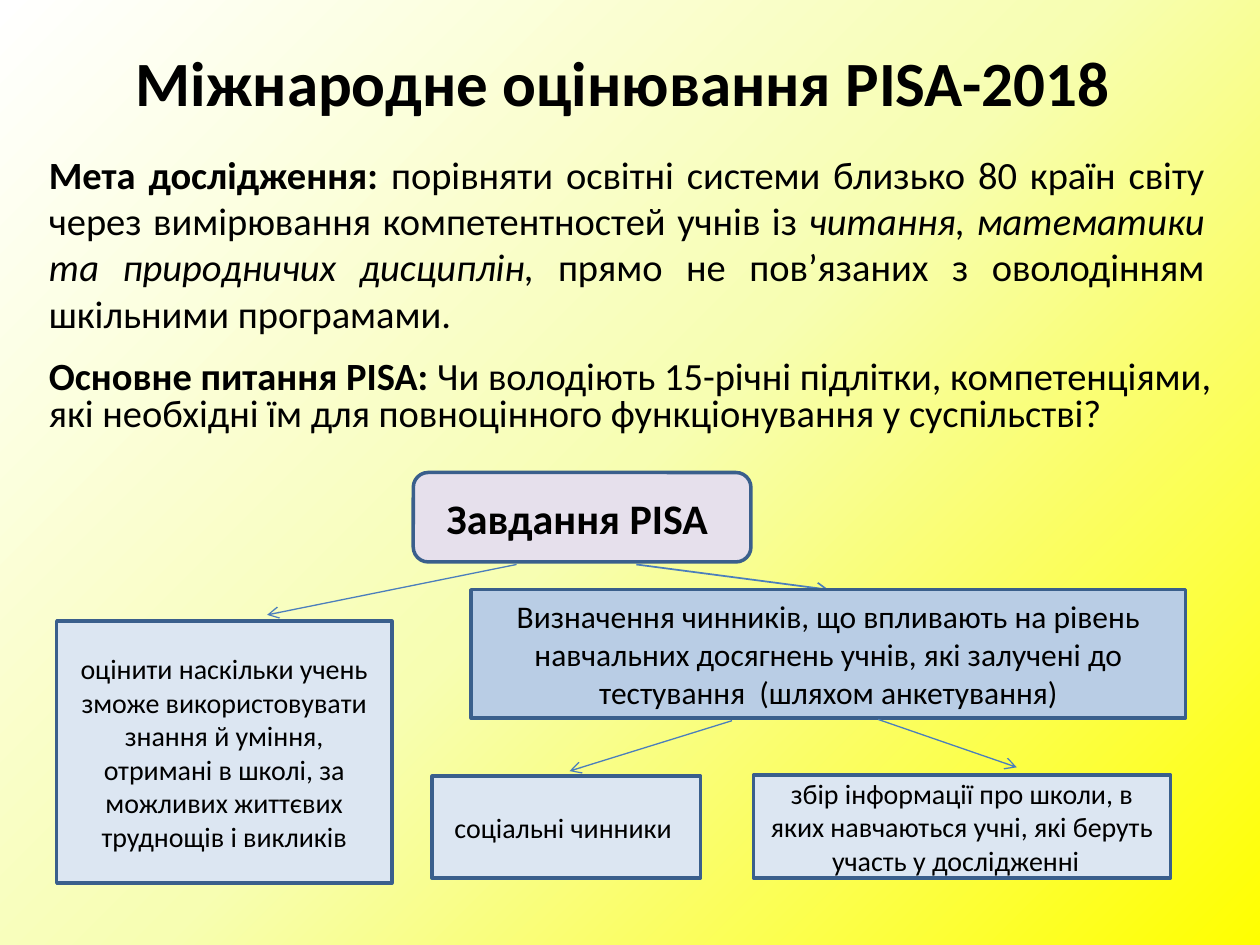
from dataclasses import dataclass
from pptx import Presentation
from pptx.dml.color import RGBColor
from pptx.enum.shapes import MSO_CONNECTOR as Conn, MSO_SHAPE as Shape
from pptx.enum.text import MSO_ANCHOR as Anchor, MSO_AUTO_SIZE as Auto, PP_ALIGN as Align
from pptx.oxml import parse_xml
from pptx.oxml.ns import nsdecls, qn
from pptx.util import Inches, Pt
from lxml.etree import SubElement


@dataclass(frozen=True)
class Theme:
    font: str = "Calibri"
    text: str = "000000"
    outline: str = "3A5F8C"
    arrow: str = "4B7EBC"
    root: str = "E6E0EC"
    branch: str = "B9CDE5"
    leaf: str = "DCE6F2"
    background: tuple = ((0, "FFFF00"), (50, "F7FEB2"), (100, "FFFFFF"))
    title: int = 36
    head: int = 24
    body: int = 22
    sub: int = 18
    small: int = 16


T = Theme()
WIDTH, HEIGHT = Inches(10), Inches(7.5)
COLUMNS = 100
UNIT = WIDTH / COLUMNS

TITLE = "Міжнародне оцінювання PISA-2018 "
TITLE_AT = (5, 3, 90, 6.9)

PASSAGES = [
    dict(at=(2.9, 11.5, 93.7, 60.6), anchor=Anchor.TOP, align=Align.JUSTIFY,
         before=0.2 * T.body, spacing=1.0,
         runs=[("Мета дослідження: ", "b"),
               ("порівняти освітні системи близько 80 країн світу через вимірювання "
                "компетентностей учнів із", ""),
               (" читання, математики та природничих дисциплін,", "i"),
               (" прямо не пов’язаних з оволодінням шкільними програмами.", "")]),
    dict(at=(2.9, 27.2, 95.1, 8.7), anchor=Anchor.MIDDLE, align=Align.LEFT,
         before=0, spacing=0.8,
         runs=[("Основне питання PISA: ", "b"),
               ("Чи володіють 15-річні підлітки, компетенціями, які необхідні їм для "
                "повноцінного функціонування у суспільстві?", "")]),
]

BOXES = {
    "tasks": (Shape.ROUNDED_RECTANGLE, (32.8, 37.5, 26.8, 7.1), T.root, T.head, True,
              "Завдання PISA "),
    "skills": (Shape.RECTANGLE, (4.5, 49.3, 26.6, 20.8), T.leaf, T.small, False,
               "оцінити наскільки учень зможе використовувати знання й уміння, "
               "отримані в школі, за можливих життєвих труднощів і викликів"),
    "factors": (Shape.RECTANGLE, (37.4, 46.8, 56.7, 10.2), T.branch, T.sub, False,
                "Визначення чинників, що впливають на рівень навчальних досягнень "
                "учнів, які залучені до тестування  (шляхом анкетування)"),
    "social": (Shape.RECTANGLE, (34.3, 61.6, 21.3, 8.1), T.leaf, T.small, False,
               "соціальні чинники "),
    "schools": (Shape.RECTANGLE, (59.8, 61.5, 33.1, 8.2), T.leaf, T.small, False,
                "збір інформації про школи, в яких навчаються учні, які беруть "
                "участь у дослідженні  "),
}

ARROWS = [
    ((50.5, 44.8), (65.7, 46.8), 1, "factors"),
    ((41, 44.8), (21.2, 48.8), 0.75, None),
    ((58.1, 57.2), (45.2, 61.2), 0.75, None),
    ((69.7, 57.1), (80.7, 60.9), 0.75, None),
]


def units(values):
    return [round(v * UNIT) for v in values]


def rgb(value):
    return RGBColor.from_string(value)


def style(p, size, align, bold=None):
    p.alignment = align
    f = p.font
    f.name, f.size, f.bold = T.font, Pt(size), bold
    f.color.rgb = rgb(T.text)


def paint_background(slide):
    slide.background.fill.gradient()
    old = next(slide.element.iter(qn("a:gradFill")))
    stops = "".join(f'<a:gs pos="{pos * 1000}"><a:srgbClr val="{color}"/></a:gs>'
                    for pos, color in T.background)
    old.getparent().replace(old, parse_xml(
        f'<a:gradFill {nsdecls("a")} rotWithShape="1"><a:gsLst>{stops}</a:gsLst>'
        '<a:path path="circle"><a:fillToRect l="100000" t="100000"/></a:path>'
        '</a:gradFill>'))


def add_title(slide):
    sp = slide.shapes.title
    sp.left, sp.top, sp.width, sp.height = units(TITLE_AT)
    tf = sp.text_frame
    tf.text = TITLE
    tf.auto_size, tf.vertical_anchor = Auto.NONE, Anchor.MIDDLE
    style(tf.paragraphs[0], T.title, Align.CENTER, True)


def add_passage(slide, at, anchor, align, before, spacing, runs):
    tf = slide.shapes.add_textbox(*units(at)).text_frame
    tf.word_wrap, tf.vertical_anchor = True, anchor
    p = tf.paragraphs[0]
    style(p, T.body, align)
    p.space_before, p.line_spacing = Pt(before), spacing
    for text, emphasis in runs:
        r = p.add_run()
        r.text = text
        r.font.bold, r.font.italic = emphasis == "b", emphasis == "i"


def add_box(slide, kind, at, fill, size, bold, text):
    sp = slide.shapes.add_shape(kind, *units(at))
    sp.shadow.inherit = False
    sp.fill.solid()
    sp.fill.fore_color.rgb = rgb(fill)
    sp.line.color.rgb, sp.line.width = rgb(T.outline), Pt(2)
    tf = sp.text_frame
    tf.text = text
    tf.word_wrap, tf.vertical_anchor = True, Anchor.MIDDLE
    style(tf.paragraphs[0], size, Align.CENTER, bold)
    return sp


def add_arrow(slide, start, end, width, target):
    ln = slide.shapes.add_connector(Conn.STRAIGHT, *units(start + end))
    if target is not None:
        ln.end_connect(target, 0)
    ln.line.color.rgb, ln.line.width = rgb(T.arrow), Pt(width)
    props = ln.element.spPr
    SubElement(props.find(qn("a:ln")), qn("a:tailEnd"), type="arrow")
    SubElement(props, qn("a:effectLst"))
    if target is not None:
        target.element.addprevious(ln.element)


def main():
    prs = Presentation()
    prs.slide_width, prs.slide_height = WIDTH, HEIGHT
    slide = prs.slides.add_slide(prs.slide_layouts[5])
    paint_background(slide)
    add_title(slide)
    for passage in PASSAGES:
        add_passage(slide, **passage)
    boxes = {name: add_box(slide, *box) for name, box in BOXES.items()}
    for start, end, width, target in ARROWS:
        add_arrow(slide, start, end, width, boxes.get(target))
    prs.save("out.pptx")


if __name__ == "__main__":
    main()
